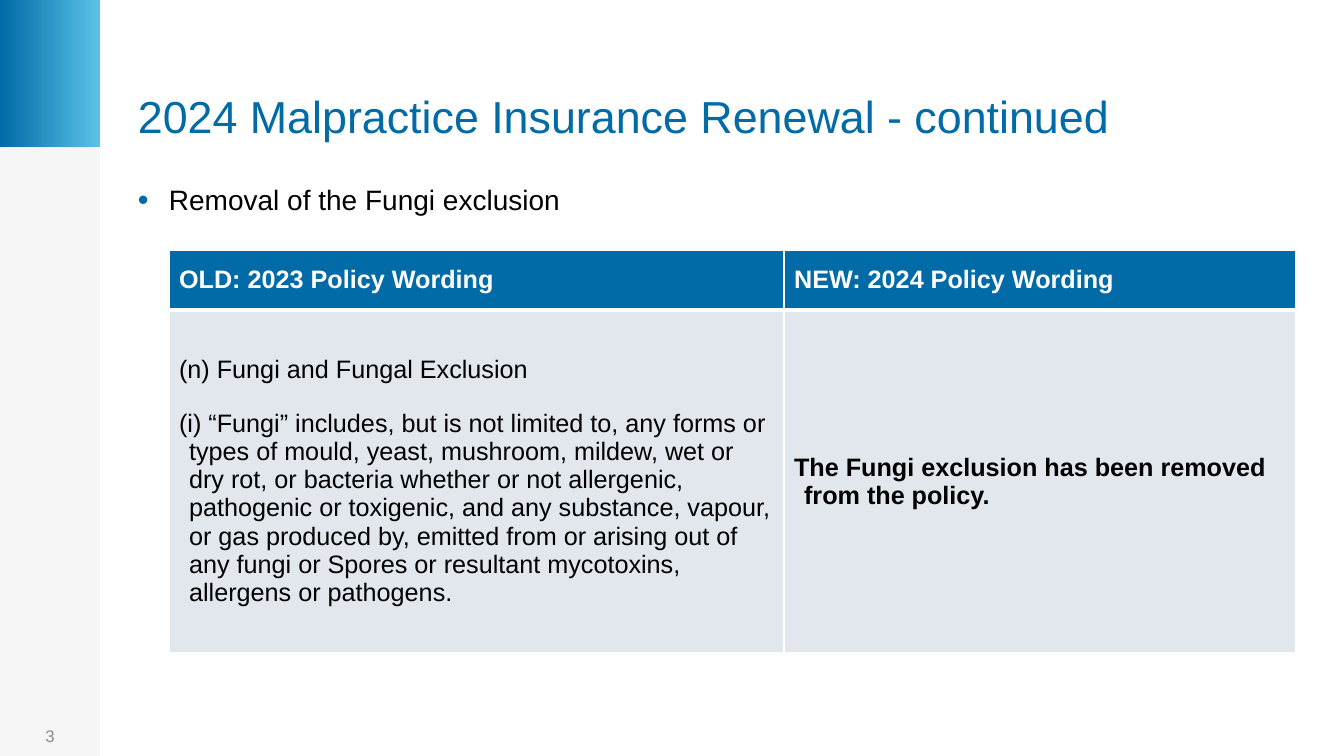
from dataclasses import dataclass

from lxml import etree
from pptx import Presentation
from pptx import util as u
from pptx.dml.color import RGBColor
from pptx.enum import shapes, text
from pptx.oxml import ns


@dataclass(frozen=True)
class Theme:
    font: str = "Arial"
    blue: str = "006BA6"
    sky: str = "5BC2E7"
    panel: str = "F6F6F6"
    cell: str = "E2E7EE"
    white: str = "FFFFFF"
    black: str = "000000"
    grey: str = "8C8C8C"
    title_size: int = 32
    body_size: int = 20
    table_size: int = 18
    number_size: int = 12


THEME = Theme()
SIDEBAR_WIDTH = 100
HEADER_HEIGHT = 147
TEXT_LEFT, TEXT_WIDTH = 128, 1088
COLUMN_WIDTHS = (615, 512)
ROW_HEIGHTS = (60, 343)

HEADINGS = ("OLD: 2023 Policy Wording", "NEW: 2024 Policy Wording")
OLD_WORDING = (
    "(n) Fungi and Fungal Exclusion",
    "(i) “Fungi” includes, but is not limited to, any forms or types of mould, "
    "yeast, mushroom, mildew, wet or dry rot, or bacteria whether or not allergenic, "
    "pathogenic or toxigenic, and any substance, vapour, or gas produced by, emitted "
    "from or arising out of any fungi or Spores or resultant mycotoxins, allergens "
    "or pathogens.",
)
NEW_WORDING = "The Fungi exclusion has been removed from the policy."


def px(length):
    return u.Emu(round(length * 914400 / 100.8))


def box(*lengths):
    return [px(length) for length in lengths]


def apply(target, values):
    for name, value in values.items():
        setattr(target, name, value)


def add_xml(parent, tag, **attributes):
    return etree.SubElement(parent, ns.qn(tag), attributes)


def add_panel(slide, bounds, colours):
    shape = slide.shapes.add_shape(shapes.MSO_SHAPE.RECTANGLE, *box(*bounds))
    shape.shadow.inherit = False
    shape.line.fill.background()
    if len(colours) == 1:
        shape.fill.solid()
        shape.fill.fore_color.rgb = RGBColor.from_string(colours[0])
        return
    shape.fill.gradient()
    shape.fill.gradient_angle = 180
    for stop, colour in zip(shape.fill.gradient_stops, colours):
        stop.color.rgb = RGBColor.from_string(colour)


def write(paragraph, wording, size, colour, bold=False, hanging=0, **spacing):
    apply(paragraph, spacing)
    if hanging:
        properties = paragraph._p.get_or_add_pPr()
        properties.set("marL", str(px(hanging)))
        properties.set("indent", str(-px(hanging)))
    run = paragraph.add_run()
    run.text = wording
    apply(run.font, {"name": THEME.font, "size": u.Pt(size), "bold": bold})
    run.font.color.rgb = RGBColor.from_string(colour)


def add_text(slide, bounds, wording, size, colour,
             anchor=text.MSO_ANCHOR.TOP, **format_values):
    frame = slide.shapes.add_textbox(*box(*bounds)).text_frame
    apply(frame, {"word_wrap": True, "vertical_anchor": anchor})
    paragraph = frame.paragraphs[0]
    write(paragraph, wording, size, colour, **format_values)
    return paragraph


def add_bullet(paragraph):
    properties = paragraph._p.get_or_add_pPr()
    add_xml(add_xml(properties, "a:buClr"), "a:srgbClr", val=THEME.blue)
    add_xml(properties, "a:buSzPct", val="110000")
    add_xml(properties, "a:buFont", typeface=THEME.font)
    add_xml(properties, "a:buChar", char="•")


def add_borders(cell, **widths):
    properties = cell._tc.get_or_add_tcPr()
    for side in "LRTB":
        line = add_xml(properties, f"a:ln{side}", w=str(u.Pt(widths.get(side, 1))))
        add_xml(add_xml(line, "a:solidFill"), "a:srgbClr", val=THEME.white)


def fill_cell(cell, paragraphs, fill, colour, bold, space_after, **borders):
    add_borders(cell, **borders)
    cell.fill.solid()
    cell.fill.fore_color.rgb = RGBColor.from_string(fill)
    cell.vertical_anchor = text.MSO_ANCHOR.MIDDLE
    frame = cell.text_frame
    for index, wording in enumerate(paragraphs):
        paragraph = frame.add_paragraph() if index else frame.paragraphs[0]
        write(paragraph, wording, THEME.table_size, colour, bold, hanging=10,
              space_before=u.Pt(6), space_after=u.Pt(space_after))


def add_policy_table(slide):
    bounds = box(169, 250, sum(COLUMN_WIDTHS), sum(ROW_HEIGHTS))
    table = slide.shapes.add_table(2, 2, *bounds).table
    for column, width in zip(table.columns, COLUMN_WIDTHS):
        column.width = px(width)
    for row, height in zip(table.rows, ROW_HEIGHTS):
        row.height = px(height)
    for column, heading in enumerate(HEADINGS):
        fill_cell(table.cell(0, column), [heading], THEME.blue, THEME.white,
                  True, 6, B=3)
    for column, (paragraphs, bold) in enumerate(
            ((OLD_WORDING, False), ([NEW_WORDING], True))):
        fill_cell(table.cell(1, column), paragraphs, THEME.cell, THEME.black,
                  bold, 12, T=3)


def main():
    presentation = Presentation()
    apply(presentation, {"slide_width": px(1344), "slide_height": px(756)})
    slide = presentation.slides.add_slide(presentation.slide_layouts[6])
    add_panel(slide, (0, HEADER_HEIGHT, SIDEBAR_WIDTH, 756 - HEADER_HEIGHT),
              [THEME.panel])
    add_panel(slide, (0, 0, SIDEBAR_WIDTH, HEADER_HEIGHT), [THEME.sky, THEME.blue])
    add_text(slide, (0, 716, SIDEBAR_WIDTH, 40), "3", THEME.number_size, THEME.grey,
             text.MSO_ANCHOR.MIDDLE, alignment=text.PP_ALIGN.CENTER)
    add_bullet(add_text(slide, (TEXT_LEFT, 178, TEXT_WIDTH, 514),
                        "Removal of the Fungi exclusion", THEME.body_size,
                        THEME.black, hanging=31, space_before=u.Pt(12)))
    add_text(slide, (TEXT_LEFT, 0, TEXT_WIDTH, HEADER_HEIGHT),
             "2024 Malpractice Insurance Renewal - continued",
             THEME.title_size, THEME.blue, text.MSO_ANCHOR.BOTTOM)
    add_policy_table(slide)
    presentation.save("out.pptx")


if __name__ == "__main__":
    main()
